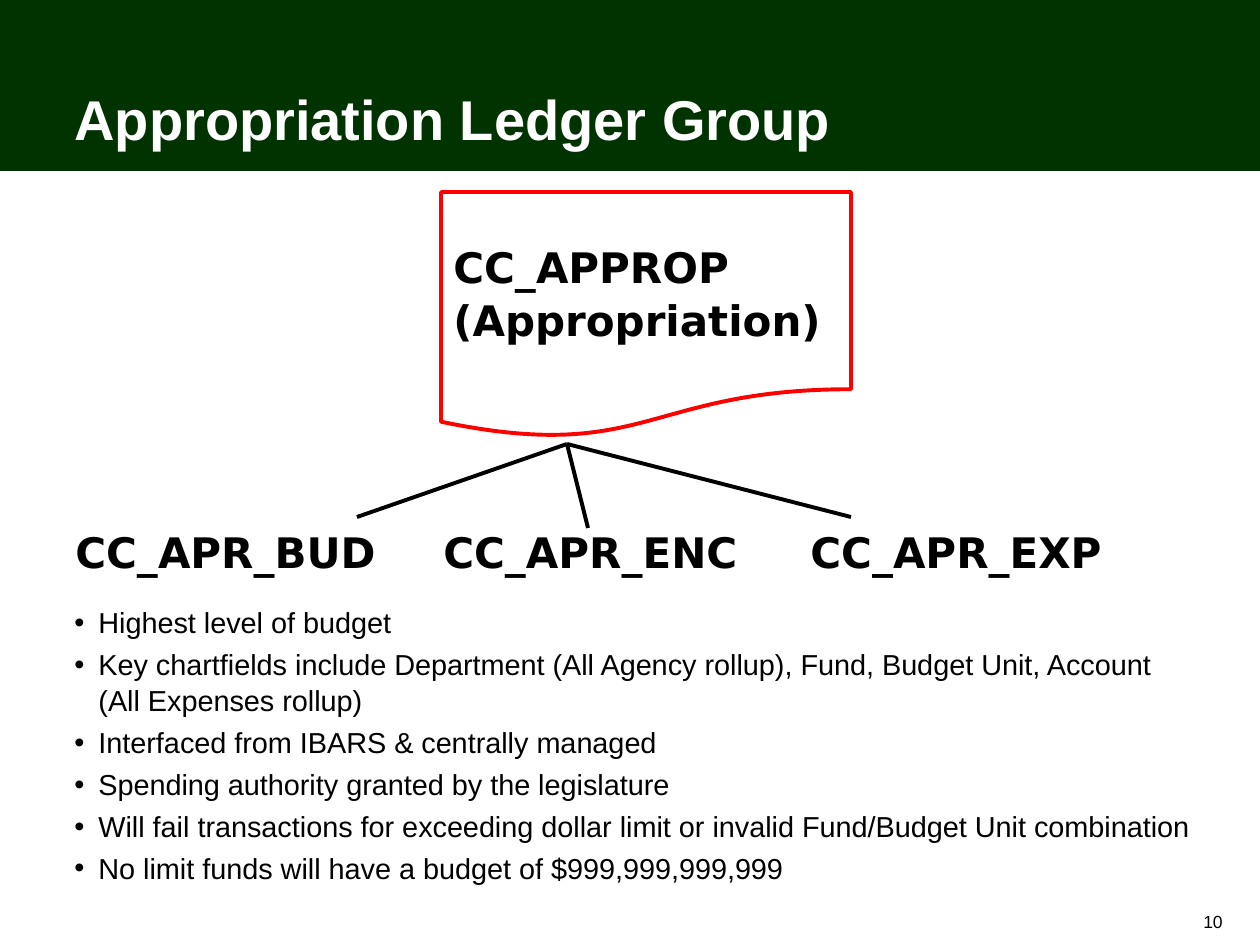
from lxml import etree
from pptx import Presentation
from pptx.dml.color import RGBColor
from pptx.enum.shapes import MSO_CONNECTOR, MSO_SHAPE
from pptx.enum.text import MSO_ANCHOR, PP_ALIGN
from pptx.oxml.ns import qn
from pptx.util import Emu, Pt

PX = 914400 / 126
GREEN = RGBColor(0x00, 0x33, 0x00)
RED = RGBColor(0xFF, 0x00, 0x00)
BLACK = RGBColor(0x00, 0x00, 0x00)
WHITE = RGBColor(0xFF, 0xFF, 0xFF)
RECTANGLE = MSO_SHAPE.RECTANGLE
DOCUMENT = MSO_SHAPE.FLOWCHART_DOCUMENT
STRAIGHT = MSO_CONNECTOR.STRAIGHT
TOP, BOTTOM = MSO_ANCHOR.TOP, MSO_ANCHOR.BOTTOM
LEFT, RIGHT = PP_ALIGN.LEFT, PP_ALIGN.RIGHT


def px(*lengths):
    return [Emu(round(length * PX)) for length in lengths]


class SlideBuilder:
    body_font = "Arial"
    ledger_font = "DejaVu Sans"
    line_width = Pt(2.25)

    def __init__(self, slide):
        self.slide = slide

    def shape(self, preset, box, fill=None, line=None):
        shape = self.slide.shapes.add_shape(preset, *px(*box))
        shape.shadow.inherit = False
        if fill is None:
            shape.fill.background()
        else:
            shape.fill.solid()
            shape.fill.fore_color.rgb = fill
        if line is None:
            shape.line.fill.background()
        else:
            shape.line.color.rgb = line
            shape.line.width = self.line_width

    def text(self, box, lines, size, font=body_font, color=BLACK, bold=False,
             anchor=TOP, align=LEFT, spacing=1.0, before=0, bullet_indent=0):
        frame = self.slide.shapes.add_textbox(*px(*box)).text_frame
        frame.word_wrap = True
        frame.vertical_anchor = anchor
        for index, line in enumerate(lines):
            paragraph = frame.add_paragraph() if index else frame.paragraphs[0]
            paragraph.alignment = align
            paragraph.line_spacing = spacing
            if index and before:
                paragraph.space_before = Pt(before)
            if bullet_indent:
                self.bullet(paragraph, bullet_indent)
            run = paragraph.add_run()
            run.text = line
            run.font.name = font
            run.font.size = Pt(size)
            run.font.bold = bold
            run.font.color.rgb = color

    def bullet(self, paragraph, indent):
        properties = paragraph._p.get_or_add_pPr()
        width = px(indent)[0]
        properties.set("marL", str(width))
        properties.set("indent", str(-width))
        etree.SubElement(properties, qn("a:buFont")).set("typeface", self.body_font)
        etree.SubElement(properties, qn("a:buChar")).set("char", "•")

    def line(self, start, end):
        connector = self.slide.shapes.add_connector(STRAIGHT, *px(*start, *end))
        connector.line.color.rgb = BLACK
        connector.line.width = self.line_width
        etree.SubElement(connector._element.spPr, qn("a:effectLst"))


def main():
    presentation = Presentation()
    presentation.slide_width, presentation.slide_height = px(1260, 945)
    builder = SlideBuilder(presentation.slides.add_slide(presentation.slide_layouts[6]))

    # Title band and page number
    builder.shape(RECTANGLE, (0, 0, 1260, 171), fill=GREEN)
    builder.text((62, 0, 866, 158), ["Appropriation Ledger Group"], 32,
                 color=WHITE, bold=True, anchor=BOTTOM)
    builder.text((1002, 900, 233, 38), ["10"], 10, anchor=BOTTOM, align=RIGHT,
                 spacing=0.8)

    # Parent ledger
    builder.shape(DOCUMENT, (441, 192, 410, 246), line=RED)
    builder.text((441, 233, 410, 122), ["CC_APPROP", "(Appropriation)"], 24,
                 font=builder.ledger_font, bold=True, spacing=1.05)

    # Child ledgers and their branches
    root = (567, 444)
    children = [
        ("CC_APR_BUD", 63, (357, 517)),
        ("CC_APR_ENC", 431, (588, 528)),
        ("CC_APR_EXP", 798, (851, 517)),
    ]
    for name, left, branch_end in children:
        builder.text((left, 518, 356, 63), [name], 24,
                     font=builder.ledger_font, bold=True, spacing=1.05)
        builder.line(root, branch_end)

    # Ledger rules
    builder.text((62, 597, 1150, 290), [
        "Highest level of budget",
        "Key chartfields include Department (All Agency rollup), Fund, Budget Unit, "
        "Account (All Expenses rollup)",
        "Interfaced from IBARS & centrally managed",
        "Spending authority granted by the legislature",
        "Will fail transactions for exceeding dollar limit or invalid Fund/Budget Unit "
        "combination",
        "No limit funds will have a budget of $999,999,999,999",
    ], 16.5, spacing=1.05, before=3.2, bullet_indent=24)

    presentation.save("out.pptx")


if __name__ == "__main__":
    main()
